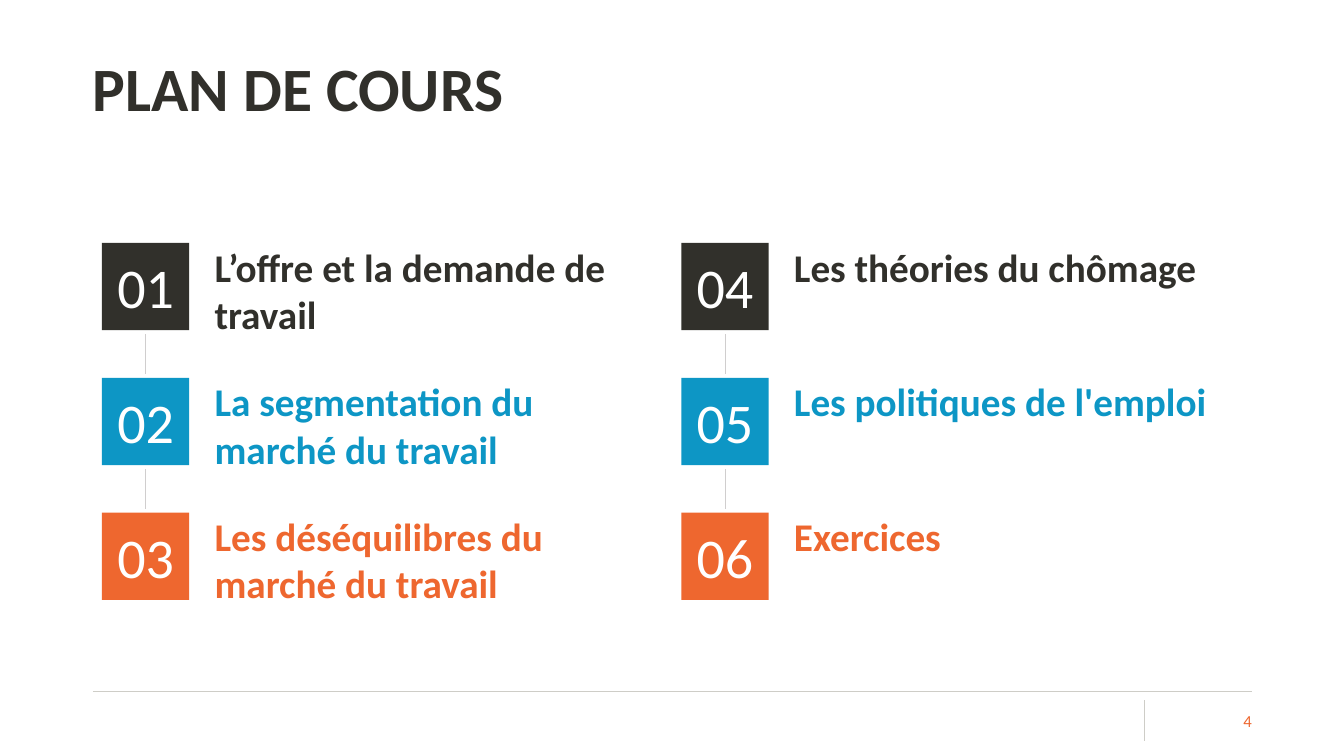
from lxml import etree
from pptx import Presentation
from pptx.dml.color import RGBColor
from pptx.enum.shapes import MSO_CONNECTOR, MSO_SHAPE
from pptx.enum.text import MSO_ANCHOR, MSO_AUTO_SIZE, PP_ALIGN
from pptx.oxml.ns import qn
from pptx.util import Cm, Pt

STRAIGHT = MSO_CONNECTOR.STRAIGHT
RECTANGLE = MSO_SHAPE.RECTANGLE
TOP, MIDDLE = MSO_ANCHOR.TOP, MSO_ANCHOR.MIDDLE
LEFT, CENTER, RIGHT = PP_ALIGN.LEFT, PP_ALIGN.CENTER, PP_ALIGN.RIGHT
NO_AUTOFIT, GROW = MSO_AUTO_SIZE.NONE, MSO_AUTO_SIZE.SHAPE_TO_FIT_TEXT
TITLE_ONLY = 5

DARK, BLUE, ORANGE, WHITE = "31302B", "0D96C5", "EE672F", "FFFFFF"
FOOTER_GREY, LINK_GREY = "CECDC7", "D0CECE"
CHAPTERS = [
    ["L’offre et la demande de travail", "La segmentation du marché du travail",
     "Les déséquilibres du marché du travail"],
    ["Les théories du chômage", "Les politiques de l'emploi", "Exercices"],
]
ROW_COLORS = [DARK, BLUE, ORANGE]
GRID_LEFT, GRID_TOP = 2.57, 6.12
COLUMN_STEP, ROW_STEP = 14.6, 3.4
BOX_SIZE, LINK_GAP = 2.2, 0.1
LABEL_OFFSET, LABEL_WIDTH, LABEL_LINE = 2.59, 11.71, 1.19


def color(value):
    return RGBColor.from_string(value)


class SlideBuilder:
    """Holds the text style and the current slide and adds elements in centimetres."""

    font_name = "Calibri"

    def __init__(self, presentation):
        self.slide = presentation.slides.add_slide(presentation.slide_layouts[TITLE_ONLY])

    def set_text(self, shape, text, size, hue, bold=False, align=LEFT, anchor=TOP,
                 insets=(0.25, 0.13, 0.25, 0.13), fit=NO_AUTOFIT):
        frame = shape.text_frame
        frame.word_wrap = True
        frame.auto_size = fit
        frame.vertical_anchor = anchor
        (frame.margin_left, frame.margin_top,
         frame.margin_right, frame.margin_bottom) = map(Cm, insets)
        paragraph = frame.paragraphs[0]
        paragraph.text = text
        paragraph.alignment = align
        font = paragraph.font
        font.name, font.size, font.bold = self.font_name, Pt(size), bold
        font.color.rgb = color(hue)
        return paragraph

    def title(self, text, left, top, width, height):
        shape = self.slide.shapes.title
        shape.left, shape.top, shape.width, shape.height = map(Cm, (left, top, width, height))
        paragraph = self.set_text(shape, text, 44, DARK, bold=True, anchor=MIDDLE,
                                  insets=(0, 0.13, 0.25, 0.13))
        paragraph.line_spacing = 0.9

    def text(self, text, left, top, width, height, size, hue, **style):
        shape = self.slide.shapes.add_textbox(*map(Cm, (left, top, width, height)))
        self.set_text(shape, text, size, hue, **style)

    def number_box(self, text, left, top, fill):
        shape = self.slide.shapes.add_shape(
            RECTANGLE, *map(Cm, (left, top, BOX_SIZE, BOX_SIZE)))
        shape.shadow.inherit = False
        shape.fill.solid()
        shape.fill.fore_color.rgb = color(fill)
        shape.line.fill.background()
        self.set_text(shape, text, 40, WHITE, align=CENTER, anchor=MIDDLE)

    def line(self, x1, y1, x2, y2, hue):
        connector = self.slide.shapes.add_connector(STRAIGHT, *map(Cm, (x1, y1, x2, y2)))
        connector.line.color.rgb = color(hue)
        connector.line.width = Pt(0.5)
        etree.SubElement(connector.element.spPr, qn("a:effectLst"))


def main():
    presentation = Presentation()
    presentation.slide_width, presentation.slide_height = Cm(33.87), Cm(19.05)
    builder = SlideBuilder(presentation)

    builder.title("PLAN DE COURS", 2.34, 0.46, 26.59, 3.68)
    builder.line(2.34, 17.42, 31.55, 17.42, FOOTER_GREY)
    builder.line(28.83, 17.65, 28.83, 18.67, FOOTER_GREY)

    for column, chapters in enumerate(CHAPTERS):
        left = GRID_LEFT + column * COLUMN_STEP
        label_height = LABEL_LINE * (2 - column)
        for row, (chapter, hue) in enumerate(zip(chapters, ROW_COLORS)):
            top = GRID_TOP + row * ROW_STEP
            number = column * len(chapters) + row + 1
            builder.text(chapter, left + LABEL_OFFSET, top, LABEL_WIDTH, label_height, 28, hue,
                         bold=True, insets=(0.25, 0, 0.25, 0), fit=GROW)
            builder.number_box(f"{number:02}", left, top, hue)
            if row:
                center = left + BOX_SIZE / 2
                builder.line(center, top - ROW_STEP + BOX_SIZE + LINK_GAP,
                             center, top - LINK_GAP, LINK_GREY)

    builder.text("4", 29.13, 17.65, 2.42, 1.02, 12, ORANGE, align=RIGHT, anchor=MIDDLE,
                 insets=(0, 0.13, 0, 0.13))
    presentation.save("out.pptx")


if __name__ == "__main__":
    main()
